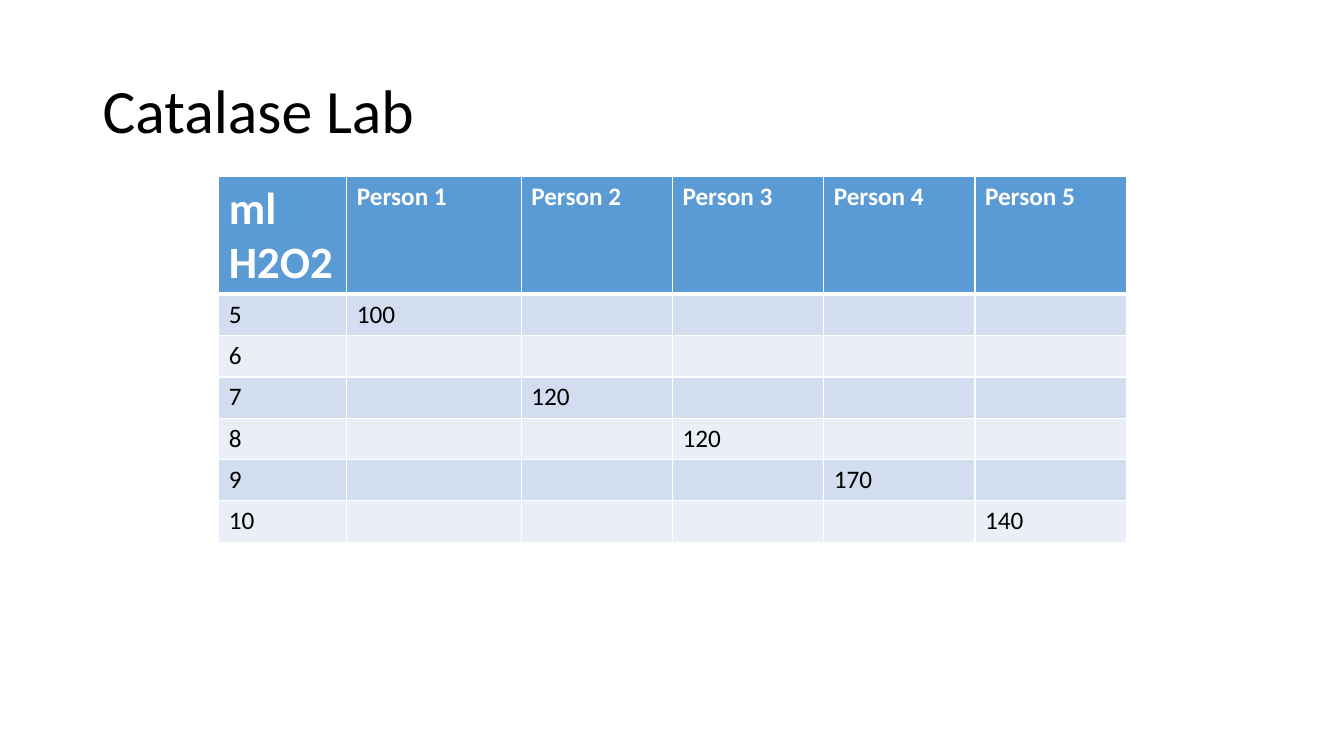
from lxml import etree
from pptx import Presentation
from pptx.dml.color import RGBColor
from pptx.enum.text import MSO_ANCHOR
from pptx.oxml.ns import qn
from pptx.util import Inches, Pt

MIDDLE = MSO_ANCHOR.MIDDLE
FONT = "Calibri"
COLORS = {
    "text": "000000",
    "white": "FFFFFF",
    "header": "5B9BD5",
    "odd_row": "D2DEEF",
    "even_row": "EAEFF7",
}
SLIDE_WIDTH, SLIDE_HEIGHT = 13.33, 7.5
BLANK_LAYOUT = 6

COLUMN_WIDTHS = [1.27, 1.73] + [1.5] * 4
HEADER_HEIGHT, ROW_HEIGHT = 1.17, 0.41
HEADERS = ["ml H2O2"] + [f"Person {number}" for number in range(1, 6)]
MEASUREMENTS = [
    (5, 1, 100),
    (6, None, None),
    (7, 2, 120),
    (8, 3, 120),
    (9, 4, 170),
    (10, 5, 140),
]


def color(name):
    return RGBColor.from_string(COLORS[name])


def style_paragraph(paragraph, size, color_name, bold=False):
    font = paragraph.font
    font.name = FONT
    font.size = Pt(size)
    font.bold = bold
    font.color.rgb = color(color_name)


def add_title(slide, text):
    title = slide.shapes.add_textbox(
        Inches(0.92), Inches(0.4), Inches(11.5), Inches(1.45)
    )
    frame = title.text_frame
    frame.word_wrap = True
    frame.vertical_anchor = MIDDLE
    paragraph = frame.paragraphs[0]
    paragraph.text = text
    paragraph.line_spacing = 0.9
    style_paragraph(paragraph, 44, "text")


def add_borders(cell, top=1, bottom=1):
    properties = cell._tc.get_or_add_tcPr()
    widths = {"lnL": 1, "lnR": 1, "lnT": top, "lnB": bottom}
    for side, width in widths.items():
        line = etree.SubElement(properties, qn(f"a:{side}"), w=str(Pt(width)))
        fill = etree.SubElement(line, qn("a:solidFill"))
        etree.SubElement(fill, qn("a:srgbClr"), val=COLORS["white"])


def fill_cell(cell, text, fill_name, size, color_name, bold):
    cell.fill.solid()
    cell.fill.fore_color.rgb = color(fill_name)
    cell.text = text
    style_paragraph(cell.text_frame.paragraphs[0], size, color_name, bold)


def table_rows():
    yield HEADERS
    for volume, person, reading in MEASUREMENTS:
        row = [str(volume)] + [""] * (len(HEADERS) - 1)
        if person:
            row[person] = str(reading)
        yield row


def add_results_table(slide):
    row_heights = [HEADER_HEIGHT] + [ROW_HEIGHT] * len(MEASUREMENTS)
    table = slide.shapes.add_table(
        len(row_heights), len(COLUMN_WIDTHS),
        Inches(2.17), Inches(1.75),
        Inches(sum(COLUMN_WIDTHS)), Inches(sum(row_heights)),
    ).table
    for column, width in zip(table.columns, COLUMN_WIDTHS):
        column.width = Inches(width)
    for row, height in zip(table.rows, row_heights):
        row.height = Inches(height)

    for row_index, texts in enumerate(table_rows()):
        is_header = row_index == 0
        band = "odd_row" if row_index % 2 else "even_row"
        for column_index, text in enumerate(texts):
            cell = table.cell(row_index, column_index)
            add_borders(
                cell,
                top=3 if row_index == 1 else 1,
                bottom=3 if is_header else 1,
            )
            fill_cell(
                cell, text,
                fill_name="header" if is_header else band,
                size=32 if is_header and column_index == 0 else 18,
                color_name="white" if is_header else "text",
                bold=is_header,
            )


def main():
    presentation = Presentation()
    presentation.slide_width = Inches(SLIDE_WIDTH)
    presentation.slide_height = Inches(SLIDE_HEIGHT)
    slide = presentation.slides.add_slide(presentation.slide_layouts[BLANK_LAYOUT])
    add_title(slide, "Catalase Lab")
    add_results_table(slide)
    presentation.save("out.pptx")


if __name__ == "__main__":
    main()
